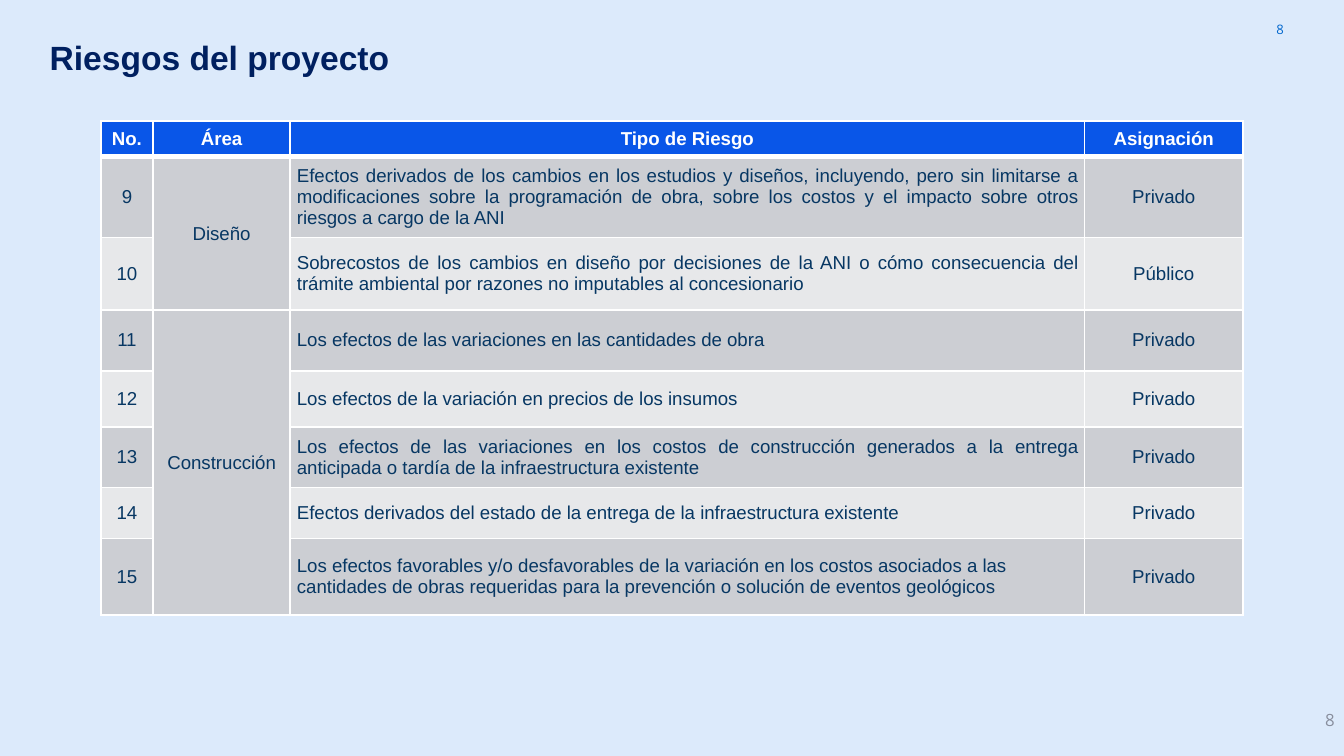
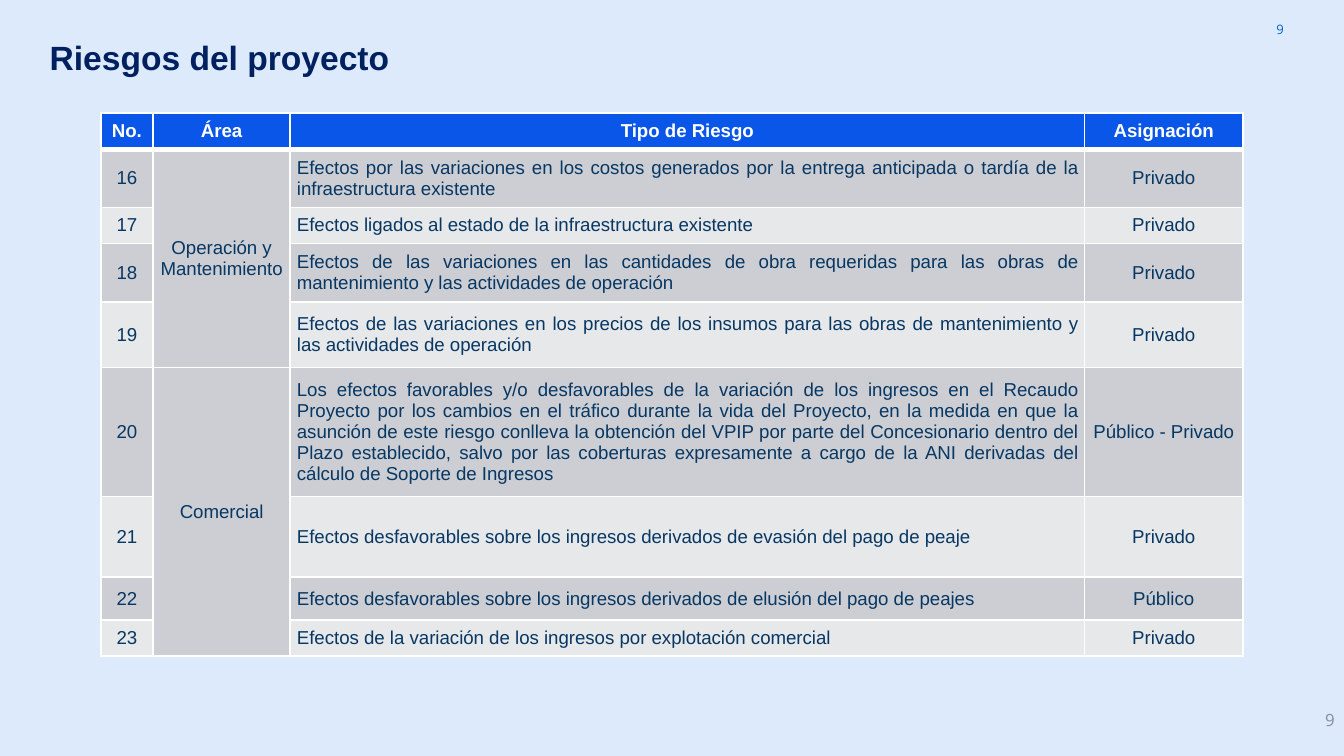
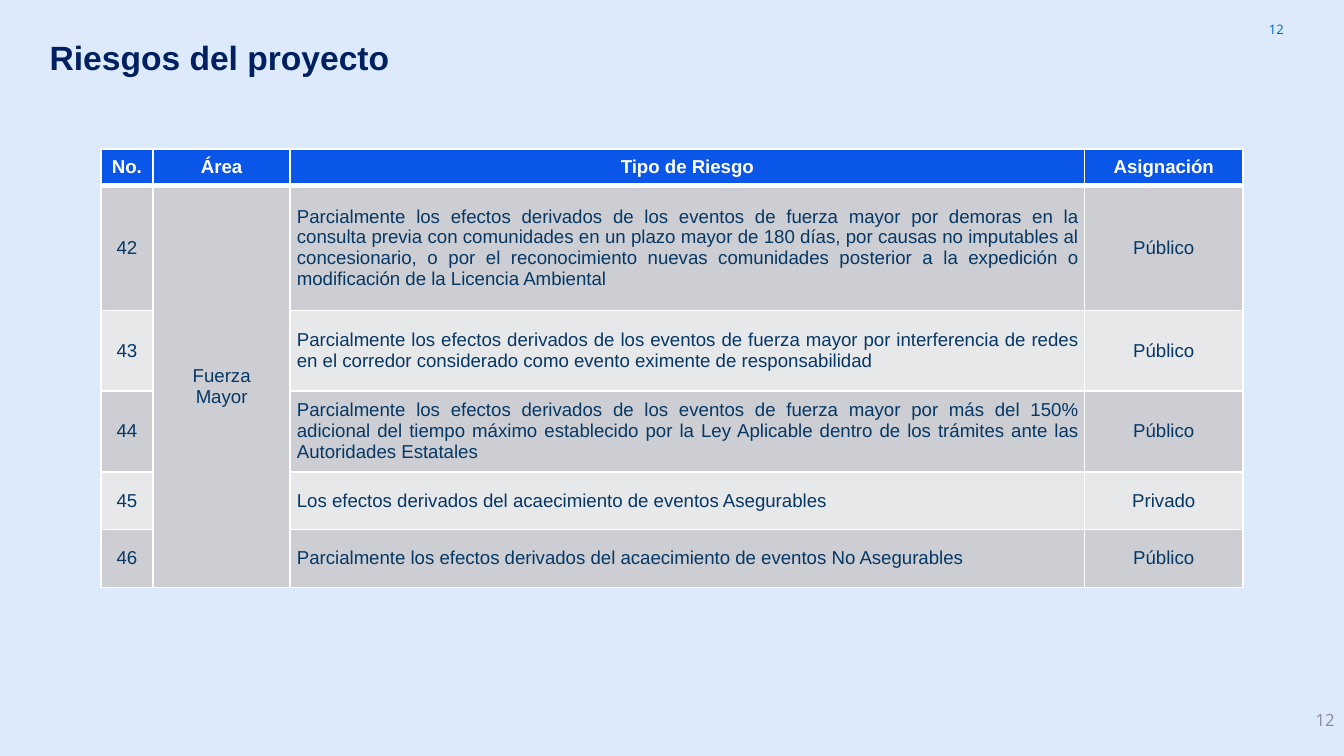
from dataclasses import dataclass

from lxml import etree
from pptx import Presentation
from pptx.dml.color import RGBColor
from pptx.enum.text import MSO_ANCHOR, MSO_AUTO_SIZE, PP_ALIGN
from pptx.oxml.ns import qn
from pptx.util import Pt

LEFT, CENTER, RIGHT, JUSTIFY = PP_ALIGN.LEFT, PP_ALIGN.CENTER, PP_ALIGN.RIGHT, PP_ALIGN.JUSTIFY
MIDDLE = MSO_ANCHOR.MIDDLE
NO_AUTOFIT = MSO_AUTO_SIZE.NONE

TITLE = "Riesgos del proyecto"
HEADINGS = ["No.", "Área", "Tipo de Riesgo", "Asignación"]
PRIVATE, PUBLIC, SHARED = "Privado", "Público", "Público - Privado"

# Each area: name, side margin, risks as (description, assignment, row height)
SLIDES = [
    dict(page=8, top=64.8, first_risk=9, header_height=18.7, areas=[
        ("Diseño", 3.6, [
            ("Efectos derivados de los cambios en los estudios y diseños, incluyendo, pero sin "
             "limitarse a modificaciones sobre la programación de obra, sobre los costos y el "
             "impacto sobre otros riesgos a cargo de la ANI", PRIVATE, 34.6),
            ("Sobrecostos de los cambios en diseño por decisiones de la ANI o cómo consecuencia "
             "del trámite ambiental por razones no imputables al concesionario", PUBLIC, 38.9),
        ]),
        ("Construcción", 3.6, [
            ("Los efectos de las variaciones en las cantidades de obra", PRIVATE, 32.4),
            ("Los efectos de la variación en precios de los insumos", PRIVATE, 30.2),
            ("Los efectos de las variaciones en los costos de construcción generados a la "
             "entrega anticipada o tardía de la infraestructura existente", PRIVATE, 32.4),
            ("Efectos derivados del estado de la entrega de la infraestructura existente",
             PRIVATE, 27.4),
            ("Los efectos favorables y/o desfavorables de la variación en los costos asociados "
             "a las cantidades de obras requeridas para la prevención o solución de eventos "
             "geológicos", PRIVATE, 41),
        ]),
    ]),
    dict(page=9, top=60.5, first_risk=16, header_height=19.4, areas=[
        ("Operación y Mantenimiento", 3.6, [
            ("Efectos por las variaciones en los costos generados por la entrega anticipada o "
             "tardía de la infraestructura existente", PRIVATE, 31),
            ("Efectos ligados al estado de la infraestructura existente", PRIVATE, 17.3),
            ("Efectos de las variaciones en las cantidades de obra requeridas para las obras de "
             "mantenimiento y las actividades de operación", PRIVATE, 31),
            ("Efectos de las variaciones en los precios de los insumos para las obras de "
             "mantenimiento y las actividades de operación", PRIVATE, 35.3),
        ]),
        ("Comercial", 3.6, [
            ("Los efectos favorables y/o desfavorables de la variación de los ingresos en el "
             "Recaudo Proyecto por los cambios en el tráfico durante la vida del Proyecto, en la "
             "medida en que la asunción de este riesgo conlleva la obtención del VPIP por parte "
             "del Concesionario dentro del Plazo establecido, salvo por las coberturas "
             "expresamente a cargo de la ANI derivadas del cálculo de Soporte de Ingresos",
             SHARED, 69.1),
            ("Efectos desfavorables sobre los ingresos derivados de evasión del pago de peaje",
             PRIVATE, 43.2),
            ("Efectos desfavorables sobre los ingresos derivados de elusión del pago de peajes",
             PUBLIC, 23),
            ("Efectos de la variación de los ingresos por explotación comercial", PRIVATE, 15.8),
        ]),
    ]),
    dict(page=12, top=79.9, first_risk=42, header_height=19.4, areas=[
        ("Fuerza Mayor", 7.2, [
            ("Parcialmente los efectos derivados de los eventos de fuerza mayor por demoras en "
             "la consulta previa con comunidades en un plazo mayor de 180 días, por causas no "
             "imputables al concesionario, o por el reconocimiento nuevas comunidades posterior "
             "a la expedición o modificación de la Licencia Ambiental", PUBLIC, 67),
            ("Parcialmente los efectos derivados de los eventos de fuerza mayor por interferencia "
             "de redes en el corredor considerado como evento eximente de responsabilidad",
             PUBLIC, 43.2),
            ("Parcialmente los efectos derivados de los eventos de fuerza mayor por más del 150% "
             "adicional del tiempo máximo establecido por la Ley Aplicable dentro de los trámites "
             "ante las Autoridades Estatales", PUBLIC, 43.2),
            ("Los efectos derivados del acaecimiento de eventos Asegurables", PRIVATE, 31),
            ("Parcialmente los efectos derivados del acaecimiento de eventos No Asegurables",
             PUBLIC, 31),
        ]),
    ]),
]
LEFT_ALIGNED_RISKS = {14, 15}


@dataclass(frozen=True)
class Theme:
    background: str = "DCEAFB"
    title: str = "002060"
    top_page: str = "0066CD"
    bottom_page: str = "888E9D"
    header: str = "0956E8"
    header_text: str = "FFFFFF"
    body_text: str = "073763"
    bands: tuple = ("E7E8EA", "CCCED3")
    border: str = "FFFFFF"
    font: str = "Arial"
    page_font: str = "Open Sans"
    title_size: float = 18
    table_size: float = 10
    top_page_size: float = 7
    bottom_page_size: float = 9


THEME = Theme()
TITLE_BOX = (21.6, 24.5, 664, 14.4)
TOP_PAGE_BOX = (651.6, 0, 43.2, 31)
BOTTOM_PAGE_BOX = (558, 375, 162, 21.6)
TABLE_LEFT = 54
COLUMN_WIDTHS = [28, 73.5, 425.5, 85]
CELL_MARGIN = 3.6


def style(paragraph, font, size, color, bold=False, align=LEFT):
    paragraph.alignment = align
    paragraph.font.name = font
    paragraph.font.size = Pt(size)
    paragraph.font.bold = bold
    paragraph.font.color.rgb = RGBColor.from_string(color)


def set_margins(target, side, vertical):
    target.margin_left = target.margin_right = Pt(side)
    target.margin_top = target.margin_bottom = Pt(vertical)


def add_title(slide):
    title = slide.shapes.title
    title.left, title.top, title.width, title.height = map(Pt, TITLE_BOX)
    frame = title.text_frame
    frame.text = TITLE
    frame.auto_size = NO_AUTOFIT
    frame.vertical_anchor = MIDDLE
    set_margins(frame, 5, 2.9)
    frame.paragraphs[0].line_spacing = 0.9
    style(frame.paragraphs[0], THEME.font, THEME.title_size, THEME.title, bold=True)


def add_page_number(slide, page, box, margins, size, color):
    frame = slide.shapes.add_textbox(*map(Pt, box)).text_frame
    frame.word_wrap = True
    frame.vertical_anchor = MIDDLE
    set_margins(frame, *margins)
    frame.text = str(page)
    style(frame.paragraphs[0], THEME.page_font, size, color, align=RIGHT)


def add_borders(cell, widths):
    """Draw cell borders from a dict of side (L, R, T, B, in that order) to width."""
    properties = cell._tc.get_or_add_tcPr()
    for side, width in widths.items():
        line = etree.SubElement(properties, qn(f"a:ln{side}"), w=str(Pt(width)))
        fill = etree.SubElement(line, qn("a:solidFill"))
        etree.SubElement(fill, qn("a:srgbClr"), val=THEME.border)


def fill_cell(cell, text, fill, color, borders, bold=False, align=CENTER, side=CELL_MARGIN):
    add_borders(cell, borders)
    cell.fill.solid()
    cell.fill.fore_color.rgb = RGBColor.from_string(fill)
    cell.vertical_anchor = MIDDLE
    set_margins(cell, side, CELL_MARGIN)
    cell.text = text
    style(cell.text_frame.paragraphs[0], THEME.font, THEME.table_size, color, bold, align)


def add_risk_table(slide, top, first_risk, header_height, areas):
    heights = [header_height] + [height for _, _, risks in areas for _, _, height in risks]
    table = slide.shapes.add_table(
        len(heights), len(HEADINGS), Pt(TABLE_LEFT), Pt(top),
        Pt(sum(COLUMN_WIDTHS)), Pt(sum(heights))).table
    for column, width in zip(table.columns, COLUMN_WIDTHS):
        column.width = Pt(width)
    for row, height in zip(table.rows, heights):
        row.height = Pt(height)

    for column, heading in enumerate(HEADINGS):
        fill_cell(table.cell(0, column), heading, THEME.header, THEME.header_text,
                  dict(L=1, R=1, T=1, B=3), bold=True)

    row = 1
    for area, area_margin, risks in areas:
        area_row = row
        for description, assignment, _ in risks:
            number = first_risk + row - 1
            area_text = area if row == area_row else ""
            description_align = LEFT if number in LEFT_ALIGNED_RISKS else JUSTIFY
            for column, (text, align, side) in enumerate([
                (str(number), CENTER, CELL_MARGIN),
                (area_text, CENTER, area_margin),
                (description, description_align, CELL_MARGIN),
                (assignment, CENTER, CELL_MARGIN),
            ]):
                fill_cell(table.cell(row, column), text, THEME.bands[row % 2],
                          THEME.body_text, dict(L=1, R=1, B=1), align=align, side=side)
            row += 1
        table.cell(area_row, 1).merge(table.cell(row - 1, 1))


def main():
    deck = Presentation()
    deck.slide_width, deck.slide_height = Pt(720), Pt(405)
    background = deck.slide_master.background.fill
    background.solid()
    background.fore_color.rgb = RGBColor.from_string(THEME.background)
    title_only = deck.slide_layouts[5]
    for content in SLIDES:
        slide = deck.slides.add_slide(title_only)
        add_title(slide)
        add_page_number(slide, content["page"], TOP_PAGE_BOX, (7.2, 7.2),
                        THEME.top_page_size, THEME.top_page)
        add_page_number(slide, content["page"], BOTTOM_PAGE_BOX, (5, 2.9),
                        THEME.bottom_page_size, THEME.bottom_page)
        add_risk_table(slide, content["top"], content["first_risk"],
                       content["header_height"], content["areas"])
    deck.save("out.pptx")


if __name__ == "__main__":
    main()
